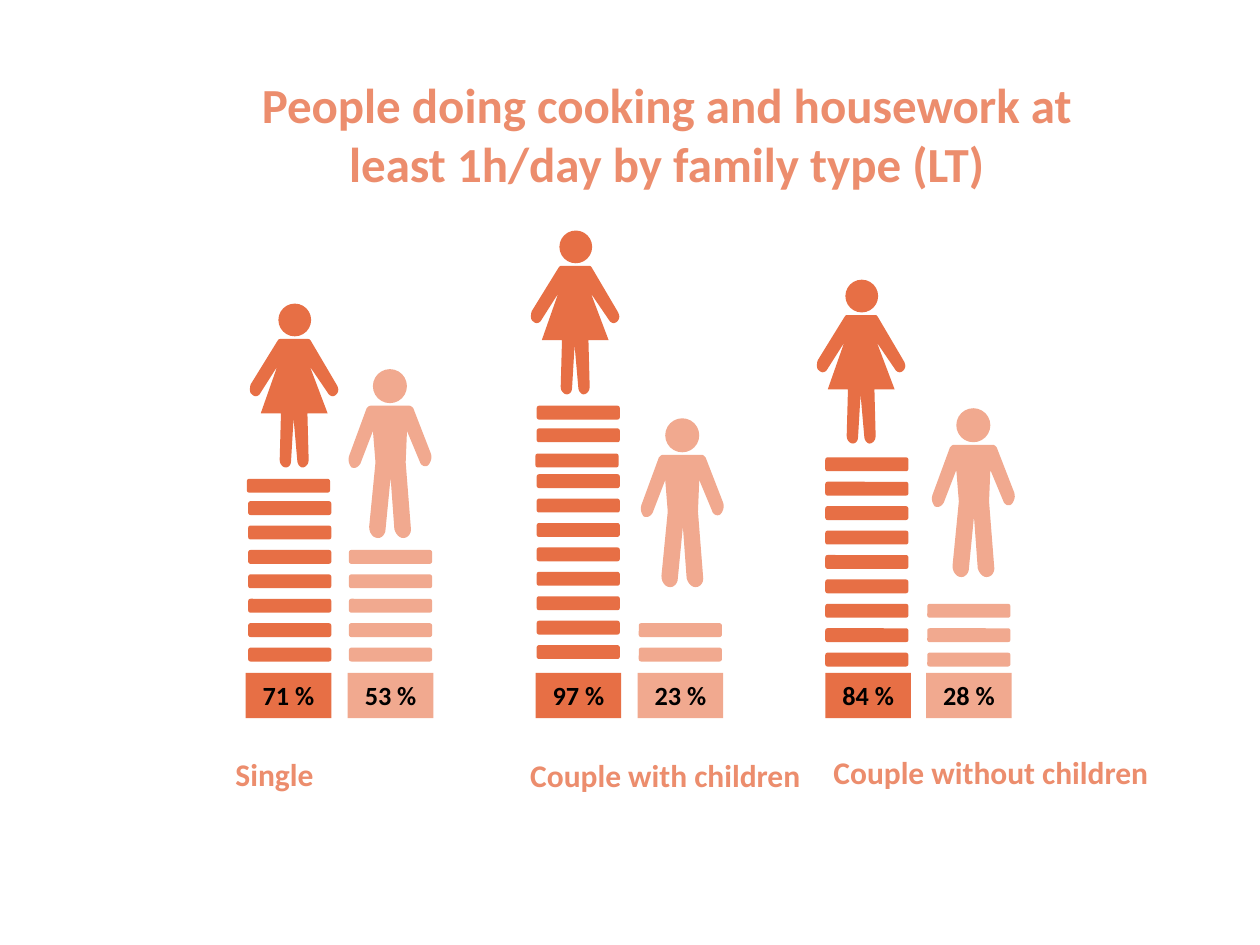
from pptx import Presentation
from pptx.dml.color import RGBColor
from pptx.enum.shapes import MSO_SHAPE
from pptx.enum.text import MSO_ANCHOR, PP_ALIGN
from pptx.util import Inches, Pt

RECT, BAR, OVAL = MSO_SHAPE.RECTANGLE, MSO_SHAPE.ROUNDED_RECTANGLE, MSO_SHAPE.OVAL
LEFT, CENTER = PP_ALIGN.LEFT, PP_ALIGN.CENTER
TOP, MIDDLE = MSO_ANCHOR.TOP, MSO_ANCHOR.MIDDLE

THEME = {
    "font": "Calibri",
    "woman": "E76F45",
    "man": "F1A98F",
    "heading": "EC8D6D",
    "value": "000000",
    "title_size": 28,
    "label_size": 18,
    "value_size": 15,
}

TITLE = ("People doing cooking and housework at least 1h/day by family type (LT)",
         (1.78, 0.54, 7.02, 1.24))

FAMILIES = [
    {"label": ("Single", (1.77, 5.94, 2.45, 0.51), LEFT),
     "woman": {"value": "71 %", "box_x": 1.95, "bar_x": 1.97, "bottom": 5.14,
               "bars": 7, "extra": [(1.96, 3.8)], "figure": (1.98, 2.41)},
     "man": {"value": "53 %", "box_x": 2.76, "bar_x": 2.77, "bottom": 5.14,
             "bars": 5, "extra": [], "figure": (2.76, 2.93)}},
    {"label": ("Couple with children", (4.11, 5.95, 2.49, 0.51), LEFT),
     "woman": {"value": "97 %", "box_x": 4.25, "bar_x": 4.26, "bottom": 5.12,
               "bars": 8, "extra": [(4.25, 3.6), (4.26, 3.4), (4.26, 3.22)],
               "figure": (4.21, 1.83)},
     "man": {"value": "23 %", "box_x": 5.06, "bar_x": 5.07, "bottom": 5.14,
             "bars": 2, "extra": [], "figure": (5.08, 3.32)}},
    {"label": ("Couple without children", (6.36, 5.93, 3.01, 0.51), CENTER),
     "woman": {"value": "84 %", "box_x": 6.55, "bar_x": 6.55, "bottom": 5.18,
               "bars": 9, "extra": [], "figure": (6.48, 2.22)},
     "man": {"value": "28 %", "box_x": 7.35, "bar_x": 7.36, "bottom": 5.18,
             "bars": 3, "extra": [], "figure": (7.39, 3.24)}},
]

# Outline steps in hundredths of an inch: two numbers draw a line, six a curve.
FIGURES = {
    "woman": {"head": (0.23, 0.26), "body_y": 0.28, "outline": [
        (1, 36), (22, 2), (23, 0, 24, 0, 25, 0), (46, 0), (47, 0, 48, 0, 49, 2),
        (69, 36), (71, 39, 71, 42, 69, 44), (67, 46, 65, 46, 63, 44),
        (48, 22), (62, 59), (46, 59), (47, 96),
        (47, 99, 45, 102, 42, 102), (40, 102, 38, 99, 38, 97), (35, 63), (33, 97),
        (33, 100, 31, 102, 29, 102), (26, 102, 24, 99, 24, 96), (25, 59), (9, 59),
        (22, 22), (8, 44), (6, 46, 4, 46, 2, 44), (0, 43, 0, 39, 1, 36)]},
    "man": {"head": (0.2, 0.27), "body_y": 0.29, "outline": [
        (1, 40), (15, 2), (16, 1, 17, 0, 18, 0), (49, 0), (50, 0, 51, 1, 52, 2),
        (66, 38), (67, 41, 66, 45, 64, 47), (62, 49, 58, 48, 57, 44),
        (47, 20), (46, 45), (50, 96),
        (51, 101, 48, 105, 44, 105), (41, 105, 38, 102, 37, 98), (34, 57), (30, 98),
        (30, 102, 27, 105, 24, 105), (20, 105, 17, 101, 17, 96), (22, 45), (20, 20),
        (10, 46), (8, 49, 6, 50, 3, 49), (1, 47, 0, 43, 1, 40)]},
}

BAR_W, BAR_H, BAR_PITCH = 0.66, 0.11, 1.55 / 8
BOX_Y, BOX_W, BOX_H = 5.34, 0.68, 0.36
CURVE_STEPS = 6


def paint(sp, color):
    sp.shadow.inherit = False
    sp.fill.solid()
    sp.fill.fore_color.rgb = RGBColor.from_string(color)
    sp.line.fill.background()


def add_preset(shapes, kind, box, color):
    sp = shapes.add_shape(kind, *map(Inches, box))
    paint(sp, color)
    return sp


def write(sp, text, size, color, align, **frame):
    tf = sp.text_frame
    for name, value in {"word_wrap": True, **frame}.items():
        setattr(tf, name, value)
    p = tf.paragraphs[0]
    p.alignment = align
    r = p.add_run()
    r.text = text
    for name, value in {"name": THEME["font"], "size": Pt(size), "bold": True}.items():
        setattr(r.font, name, value)
    r.font.color.rgb = RGBColor.from_string(color)


def add_heading(shapes, text, box, size, align):
    sp = shapes.add_textbox(*map(Inches, box))
    write(sp, text, size, THEME["heading"], align, vertical_anchor=TOP)


def trace(outline):
    points = [outline[0]]
    for step in outline[1:]:
        if len(step) == 2:
            points.append(step)
            continue
        start, a, b, end = points[-1], step[:2], step[2:4], step[4:]
        for i in range(1, CURVE_STEPS + 1):
            t = i / CURVE_STEPS
            u = 1 - t
            points.append(tuple(
                u**3 * start[k] + 3 * u * u * t * a[k] + 3 * u * t * t * b[k] + t**3 * end[k]
                for k in (0, 1)))
    return [(x * 10, y * 10) for x, y in points]


def add_figure(slide, who, x, y):
    figure = FIGURES[who]
    shapes = slide.shapes.add_group_shape().shapes
    head_x, size = figure["head"]
    add_preset(shapes, OVAL, (x + head_x, y, size, size), THEME[who])
    points = trace(figure["outline"])
    builder = shapes.build_freeform(*points[0], scale=Inches(1) / 1000)
    builder.add_line_segments(points[1:], close=True)
    paint(builder.convert_to_shape(Inches(x), Inches(y + figure["body_y"])), THEME[who])


def add_column(slide, who, col):
    stack = [(col["bar_x"], col["bottom"] - i * BAR_PITCH) for i in range(col["bars"])]
    for x, y in stack + col["extra"]:
        add_preset(slide.shapes, BAR, (x, y, BAR_W, BAR_H), THEME[who])
    sp = add_preset(slide.shapes, RECT, (col["box_x"], BOX_Y, BOX_W, BOX_H), THEME[who])
    write(sp, col["value"], THEME["value_size"], THEME["value"], CENTER,
          vertical_anchor=MIDDLE, margin_left=0, margin_right=0)
    add_figure(slide, who, *col["figure"])


def main():
    prs = Presentation()
    prs.slide_width, prs.slide_height = Inches(10), Inches(7.5)
    s = prs.slides.add_slide(prs.slide_layouts[6])
    add_heading(s.shapes, *TITLE, THEME["title_size"], CENTER)
    for family in FAMILIES:
        for who in FIGURES:
            add_column(s, who, family[who])
        text, box, align = family["label"]
        add_heading(s.shapes, text, box, THEME["label_size"], align)
    prs.save("out.pptx")


if __name__ == "__main__":
    main()
